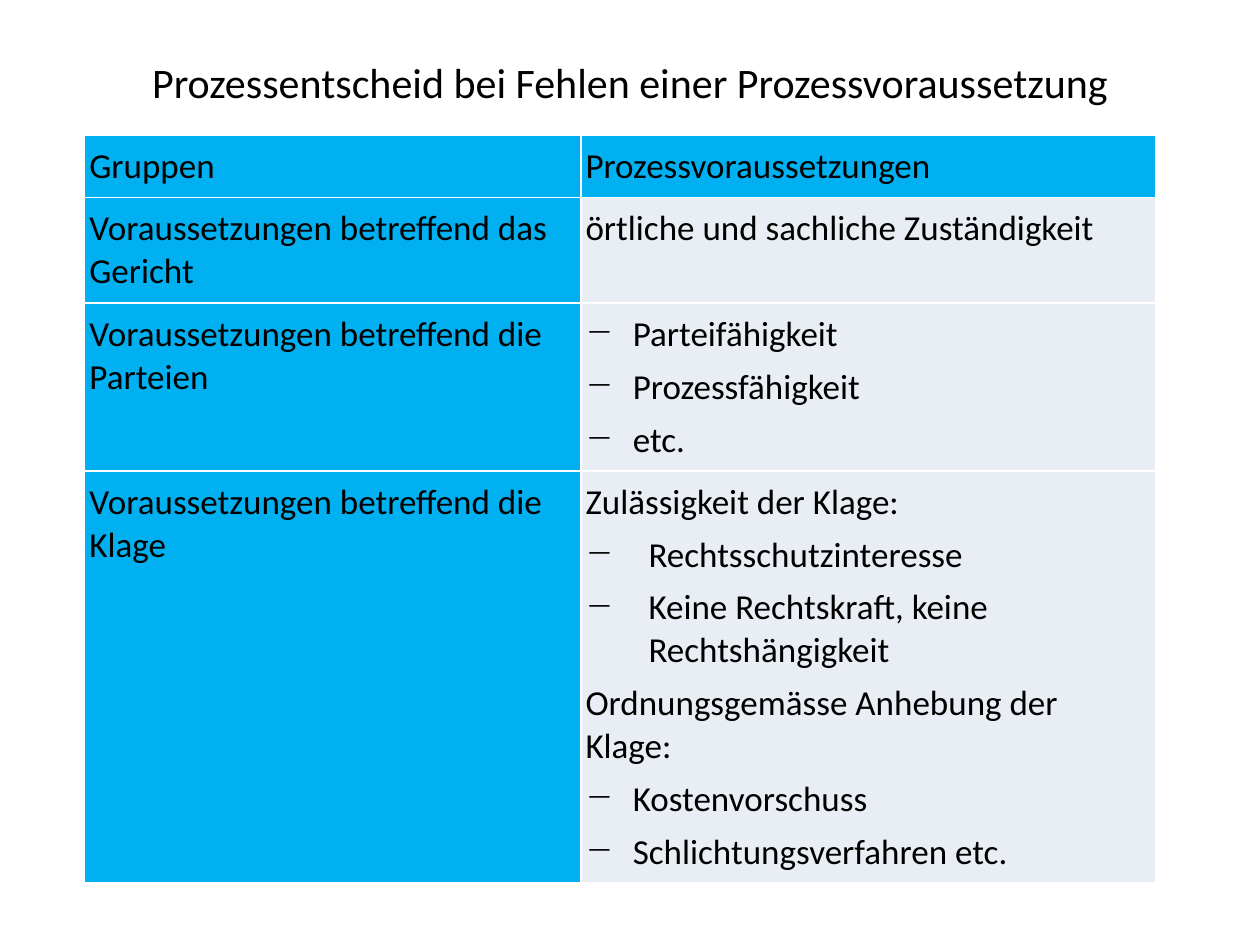
from lxml.etree import SubElement
from pptx import Presentation
from pptx.dml.color import RGBColor
from pptx.enum.text import MSO_ANCHOR, PP_ALIGN
from pptx.oxml.ns import qn
from pptx.util import Pt

TITLE = "Prozessentscheid bei Fehlen einer Prozessvoraussetzung"
BLUE, PALE, WHITE, BLACK = "00B0F0", "E9EDF4", "FFFFFF", "000000"
LEFT, JUSTIFY = PP_ALIGN.LEFT, PP_ALIGN.JUSTIFY
NARROW, WIDE = 27, 36

# text, alignment, bullet indent
ROWS = [
    (35.3, "Gruppen", [("Prozessvoraussetzungen", LEFT, 0)]),
    (60.3, "Voraussetzungen betreffend das Gericht",
     [("örtliche und sachliche Zuständigkeit", JUSTIFY, 0)]),
    (96, "Voraussetzungen betreffend die Parteien",
     [("Parteifähigkeit", JUSTIFY, NARROW),
      ("Prozessfähigkeit", JUSTIFY, NARROW),
      ("etc.", JUSTIFY, NARROW)]),
    (235.4, "Voraussetzungen betreffend die Klage",
     [("Zulässigkeit der Klage:", JUSTIFY, 0),
      ("Rechtsschutzinteresse", JUSTIFY, WIDE),
      ("Keine Rechtskraft, keine Rechtshängigkeit", LEFT, WIDE),
      ("Ordnungsgemässe Anhebung der Klage:", LEFT, 0),
      ("Kostenvorschuss", JUSTIFY, NARROW),
      ("Schlichtungsverfahren etc.", JUSTIFY, NARROW)]),
]
COLUMNS = [283.5, 328.8]


def color(value):
    return RGBColor.from_string(value)


def add_run(p, text, size):
    r = p.add_run()
    r.text = text
    r.font.name = "Calibri"
    r.font.size = Pt(size)
    r.font.color.rgb = color(BLACK)


def add_borders(cell):
    tc_pr = cell._tc.get_or_add_tcPr()
    for side in ("a:lnL", "a:lnR", "a:lnT", "a:lnB"):
        ln = SubElement(tc_pr, qn(side), w=str(Pt(1)))
        fill = SubElement(ln, qn("a:solidFill"))
        SubElement(fill, qn("a:srgbClr"), val=WHITE)


def set_bullet(p, indent):
    p_pr = p._p.get_or_add_pPr()
    p_pr.set("marL", str(Pt(indent)))
    p_pr.set("indent", str(-Pt(indent)))
    SubElement(p_pr, qn("a:buChar"), char="−")


def fill_cell(cell, lines, background, anchor):
    add_borders(cell)
    cell.fill.solid()
    cell.fill.fore_color.rgb = color(background)
    cell.margin_left = cell.margin_right = Pt(2.7)
    cell.margin_top = cell.margin_bottom = Pt(5.7)
    cell.vertical_anchor = anchor
    tf = cell.text_frame
    for i, (text, align, indent) in enumerate(lines):
        p = tf.add_paragraph() if i else tf.paragraphs[0]
        p.alignment = align
        p.space_after = Pt(5.7)
        if indent:
            set_bullet(p, indent)
        add_run(p, text, 20)


def main():
    prs = Presentation()
    prs.slide_width, prs.slide_height = Pt(720), Pt(540)
    s = prs.slides.add_slide(prs.slide_layouts[6])

    tf = s.shapes.add_textbox(Pt(36), Pt(21.6), Pt(648), Pt(49.7)).text_frame
    tf.word_wrap = True
    tf.vertical_anchor = MSO_ANCHOR.MIDDLE
    p = tf.paragraphs[0]
    p.alignment = PP_ALIGN.CENTER
    add_run(p, TITLE, 24)

    height = sum(row[0] for row in ROWS)
    table = s.shapes.add_table(len(ROWS), len(COLUMNS), Pt(48.4), Pt(77.4),
                               Pt(sum(COLUMNS)), Pt(height)).table
    table.first_row = table.horz_banding = False
    for column, width in zip(table.columns, COLUMNS):
        column.width = Pt(width)
    for i, (row_height, group, conditions) in enumerate(ROWS):
        table.rows[i].height = Pt(row_height)
        anchor = MSO_ANCHOR.TOP if i else MSO_ANCHOR.MIDDLE
        fill_cell(table.cell(i, 0), [(group, LEFT, 0)], BLUE, anchor)
        fill_cell(table.cell(i, 1), conditions, PALE if i else BLUE, anchor)

    prs.save("out.pptx")


if __name__ == "__main__":
    main()
